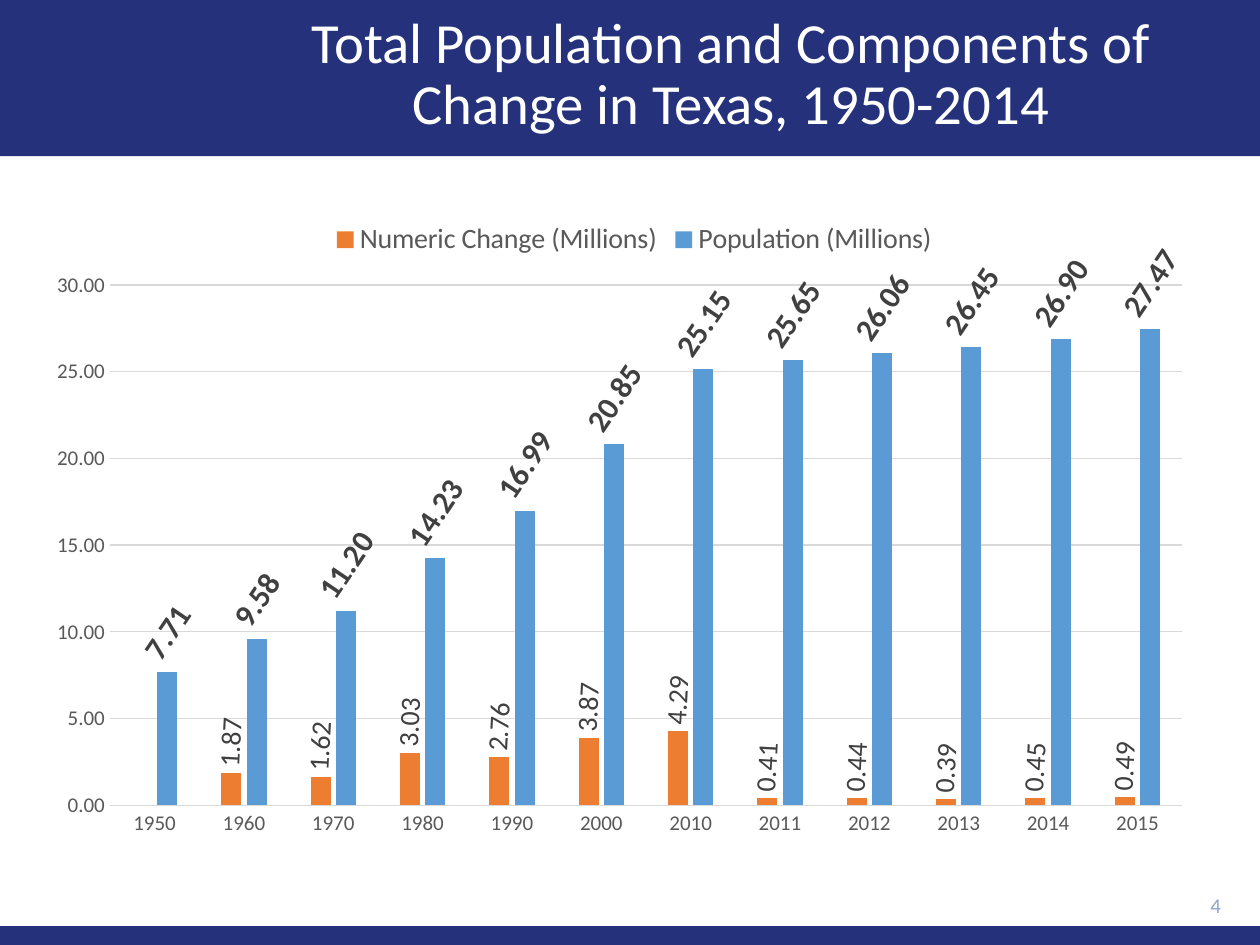
from lxml import etree
from pptx import Presentation
from pptx.chart.data import CategoryChartData
from pptx.dml.color import RGBColor
from pptx.enum.chart import XL_CHART_TYPE, XL_LABEL_POSITION, XL_LEGEND_POSITION, XL_TICK_MARK
from pptx.enum.shapes import MSO_SHAPE
from pptx.enum.text import MSO_ANCHOR, MSO_AUTO_SIZE, PP_ALIGN
from pptx.oxml.ns import qn
from pptx.util import Inches, Pt

CLUSTERED = XL_CHART_TYPE.COLUMN_CLUSTERED
OUTSIDE_END = XL_LABEL_POSITION.OUTSIDE_END
LEGEND_TOP = XL_LEGEND_POSITION.TOP
NO_TICK = XL_TICK_MARK.NONE
RECTANGLE = MSO_SHAPE.RECTANGLE
MIDDLE = MSO_ANCHOR.MIDDLE
NO_AUTOFIT = MSO_AUTO_SIZE.NONE
CENTER, RIGHT = PP_ALIGN.CENTER, PP_ALIGN.RIGHT

FONT = "Calibri"
COLORS = {
    "navy": "25327B", "white": "FFFFFF", "number": "8FA5D1", "axis": "595959",
    "grid": "D9D9D9", "label": "404040", "change": "ED7D31", "population": "5B9BD5",
}
TITLE = "Total Population and Components of Change in Texas, 1950-2014"
PAGE_NUMBER = "4"
BANDS = [(0, 1.24), (7.35, 0.15)]
YEARS = ["1950", "1960", "1970", "1980", "1990", "2000",
         "2010", "2011", "2012", "2013", "2014", "2015"]
SERIES = [
    {"name": "Numeric Change (Millions)", "color": "change", "size": 16, "bold": False, "angle": -87,
     "values": [None, 1.87, 1.62, 3.03, 2.76, 3.87, 4.29, 0.41, 0.44, 0.39, 0.45, 0.49]},
    {"name": "Population (Millions)", "color": "population", "size": 18, "bold": True, "angle": -56,
     "values": [7.71, 9.58, 11.20, 14.23, 16.99, 20.85, 25.15, 25.65, 26.06, 26.45, 26.90, 27.47]},
]
PLOT_LAYOUT = {"layoutTarget": "inner", "xMode": "edge", "yMode": "edge",
               "x": 0.05, "y": 0.12, "w": 0.92, "h": 0.81}


def rgb(name):
    return RGBColor.from_string(COLORS[name])


def style_font(font, size, color, bold=False):
    font.name = FONT
    font.size = Pt(size)
    font.bold = bold
    font.color.rgb = rgb(color)


def style_line(line):
    line.color.rgb = rgb("grid")
    line.width = Pt(0.75)


def write_text(box, text, size, color, alignment):
    frame = box.text_frame
    frame.text = text
    frame.word_wrap = True
    frame.auto_size = NO_AUTOFIT
    frame.vertical_anchor = MIDDLE
    paragraph = frame.paragraphs[0]
    paragraph.alignment = alignment
    style_font(paragraph.font, size, color)
    return paragraph


def add_band(page, top, height):
    band = page.shapes.add_shape(RECTANGLE, 0, Inches(top), Inches(10), Inches(height))
    band.shadow.inherit = False
    band.fill.solid()
    band.fill.fore_color.rgb = rgb("navy")
    band.line.fill.background()


def add_title(page):
    title = page.shapes.title
    title.left, title.top, title.width, title.height = map(Inches, (1.7, 0.1, 8.2, 1))
    write_text(title, TITLE, 32.4, "white", CENTER).line_spacing = 0.9
    title._element.getparent().append(title._element)


def set_plot_layout(chart):
    plot_area = chart._chartSpace.chart.plotArea
    for old_layout in plot_area.findall(qn("c:layout")):
        plot_area.remove(old_layout)
    layout = etree.Element(qn("c:layout"))
    manual = etree.SubElement(layout, qn("c:manualLayout"))
    for tag, value in PLOT_LAYOUT.items():
        etree.SubElement(manual, qn(f"c:{tag}")).set("val", str(value))
    plot_area.insert(0, layout)


def style_series(series, details):
    series.format.fill.solid()
    series.format.fill.fore_color.rgb = rgb(details["color"])
    series.invert_if_negative = False
    labels = series.data_labels
    labels.show_value = True
    labels.position = OUTSIDE_END
    labels.number_format = "0.00"
    labels.number_format_is_linked = False
    style_font(labels.font, details["size"], "label", details["bold"])
    body = labels._element.find(".//" + qn("a:bodyPr"))
    body.set("rot", str(details["angle"] * 60000))
    body.set("vert", "horz")


def add_population_chart(page):
    data = CategoryChartData(number_format="0.00")
    data.categories = YEARS
    for details in SERIES:
        data.add_series(details["name"], details["values"])
    frame = page.shapes.add_chart(CLUSTERED, *map(Inches, (0.41, 1.65, 9.25, 5.1)), data)
    chart = frame.chart
    chart.has_title = False
    chart.font.name = FONT
    chart.font.size = Pt(10)
    chart.has_legend = True
    chart.legend.position = LEGEND_TOP
    chart.legend.include_in_layout = False
    style_font(chart.legend.font, 16, "axis")

    for axis in (chart.category_axis, chart.value_axis):
        axis.major_tick_mark = axis.minor_tick_mark = NO_TICK
        style_font(axis.tick_labels.font, 12, "axis")
    style_line(chart.category_axis.format.line)
    values = chart.value_axis
    values.minimum_scale, values.maximum_scale, values.major_unit = 0, 30, 5
    values.tick_labels.number_format = "0.00"
    values.tick_labels.number_format_is_linked = False
    values.format.line.fill.background()
    style_line(values.major_gridlines.format.line)

    plot = chart.plots[0]
    plot.gap_width, plot.overlap = 219, -27
    plot.vary_by_categories = False
    for series, details in zip(plot.series, SERIES):
        style_series(series, details)
    set_plot_layout(chart)


def main():
    deck = Presentation()
    deck.slide_width, deck.slide_height = Inches(10), Inches(7.5)
    page = deck.slides.add_slide(deck.slide_layouts[5])
    for top, height in BANDS:
        add_band(page, top, height)
    add_title(page)
    number = page.shapes.add_textbox(*map(Inches, (8.9, 7.01, 0.89, 0.34)))
    write_text(number, PAGE_NUMBER, 12, "number", RIGHT)
    add_population_chart(page)
    deck.save("out.pptx")


if __name__ == "__main__":
    main()
